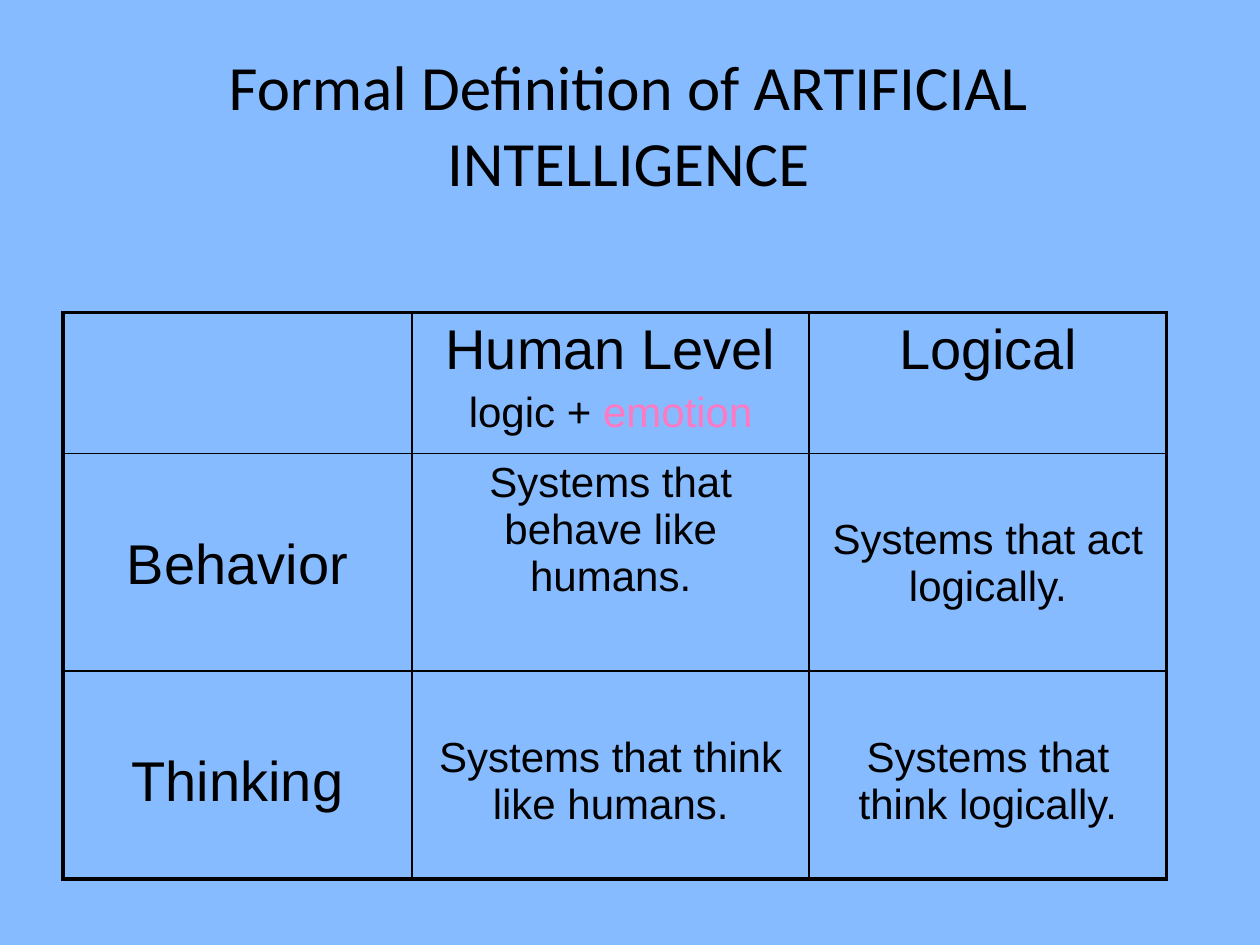
from lxml.etree import SubElement
from pptx import Presentation
from pptx.dml.color import RGBColor
from pptx.enum.text import MSO_ANCHOR, PP_ALIGN
from pptx.oxml.ns import qn
from pptx.util import Cm, Pt

SKY = RGBColor(0x87, 0xBB, 0xFF)
BLACK = RGBColor(0, 0, 0)
PINK = RGBColor(0xFF, 0x79, 0xC2)

HEADING, DETAIL = 32, 24
OUTER, INNER = Pt(2.25), Pt(1)
TOP_INSET, HEADING_INSET, DETAIL_INSET = 0.13, 1.61, 1.27

COLUMNS = (7.04, 8.0, 7.21)
ROWS = (2.84, 4.39, 4.19)

DEFINITIONS = [
    [
        (TOP_INSET, []),
        (TOP_INSET, [(HEADING, [("Human Level", BLACK)]),
                     (DETAIL, [("logic + ", BLACK), ("emotion", PINK)])]),
        (TOP_INSET, [(HEADING, [("Logical", BLACK)])]),
    ],
    [
        (HEADING_INSET, [(HEADING, [("Behavior", BLACK)])]),
        (TOP_INSET, [(DETAIL, [("Systems that behave like humans.", BLACK)])]),
        (DETAIL_INSET, [(DETAIL, [("Systems that act logically.", BLACK)])]),
    ],
    [
        (HEADING_INSET, [(HEADING, [("Thinking", BLACK)])]),
        (DETAIL_INSET, [(DETAIL, [("Systems that think like humans.", BLACK)])]),
        (DETAIL_INSET, [(DETAIL, [("Systems that think logically.", BLACK)])]),
    ],
]


def place_title(slide, left, top, width, height):
    """Move and format the title placeholder within the given box."""
    title = slide.shapes.title
    title.left, title.top = Cm(left), Cm(top)
    title.width, title.height = Cm(width), Cm(height)
    frame = title.text_frame
    frame.text = "Formal Definition of ARTIFICIAL INTELLIGENCE"
    frame.word_wrap = True
    frame.vertical_anchor = MSO_ANCHOR.MIDDLE
    heading = frame.paragraphs[0]
    heading.alignment = PP_ALIGN.CENTER
    heading.font.name = "Calibri"
    heading.font.size = Pt(36)
    heading.font.color.rgb = BLACK


def draw_borders(cell, row, column):
    """Rule a cell, with heavier lines on the table's outer edges."""
    edges = {
        "a:lnL": column == 0,
        "a:lnR": column == len(COLUMNS) - 1,
        "a:lnT": row == 0,
        "a:lnB": row == len(ROWS) - 1,
    }
    properties = cell._tc.get_or_add_tcPr()
    for tag, is_outer in edges.items():
        line = SubElement(properties, qn(tag), w=str(OUTER if is_outer else INNER))
        fill = SubElement(line, qn("a:solidFill"))
        SubElement(fill, qn("a:srgbClr"), val=str(BLACK))


def write_cell(cell, inset, lines):
    """Write centred lines of coloured runs below the given top inset."""
    cell.margin_top = Cm(inset)
    cell.vertical_anchor = MSO_ANCHOR.TOP
    frame = cell.text_frame
    for index, (size, runs) in enumerate(lines):
        paragraph = frame.add_paragraph() if index else frame.paragraphs[0]
        paragraph.alignment = PP_ALIGN.CENTER
        paragraph.font.name = "Arial"
        paragraph.font.size = Pt(size)
        if index:
            paragraph.space_before = Pt(4.5)
        for text, color in runs:
            run = paragraph.add_run()
            run.text = text
            run.font.name = "Arial"
            run.font.size = Pt(size)
            run.font.color.rgb = color


def place_definitions(slide, left, top):
    """Place the table of definitions with its corner at the given point."""
    table = slide.shapes.add_table(
        len(ROWS), len(COLUMNS), Cm(left), Cm(top), Cm(sum(COLUMNS)), Cm(sum(ROWS))
    ).table
    table.first_row = table.horz_banding = False
    for column, width in zip(table.columns, COLUMNS):
        column.width = Cm(width)
    for row, height in zip(table.rows, ROWS):
        row.height = Cm(height)
    for r, definitions in enumerate(DEFINITIONS):
        for c, (inset, lines) in enumerate(definitions):
            cell = table.cell(r, c)
            draw_borders(cell, r, c)
            cell.fill.background()
            write_cell(cell, inset, lines)


def main():
    """Build and save the presentation."""
    presentation = Presentation()
    presentation.slide_width, presentation.slide_height = Cm(25.4), Cm(19.05)
    slide = presentation.slides.add_slide(presentation.slide_layouts[5])
    slide.background.fill.solid()
    slide.background.fill.fore_color.rgb = SKY
    place_title(slide, 0.84, 0.64, 23.65, 3.68)
    place_definitions(slide, 1.27, 6.3)
    presentation.save("out.pptx")


if __name__ == "__main__":
    main()
